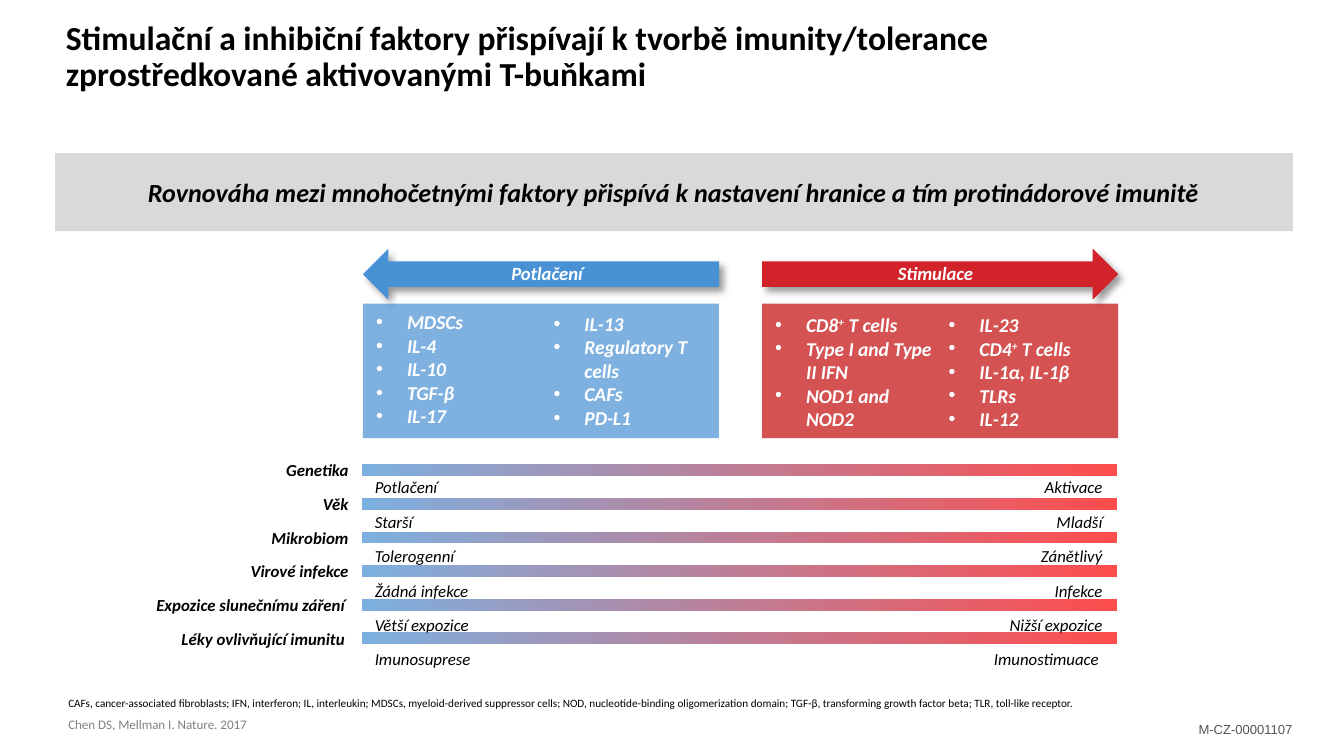
from lxml import etree
from pptx import Presentation
from pptx.dml.color import RGBColor
from pptx.enum.shapes import MSO_SHAPE
from pptx.enum.text import MSO_ANCHOR, PP_ALIGN
from pptx.oxml.ns import qn
from pptx.util import Inches, Pt

LEFT, CENTER, RIGHT = PP_ALIGN.LEFT, PP_ALIGN.CENTER, PP_ALIGN.RIGHT
TOP, MIDDLE, BOTTOM = MSO_ANCHOR.TOP, MSO_ANCHOR.MIDDLE, MSO_ANCHOR.BOTTOM
RECTANGLE = MSO_SHAPE.RECTANGLE

THEME = {
    "font": "Calibri", "code_font": "Arial",
    "black": "000000", "white": "FFFFFF", "gray": "808080", "code": "555555",
    "band": "D9D9D9", "blue": "4891D4", "red": "D2232A",
    "dark_red": "C00000", "bright_red": "FF0000",
    "title": 18, "message": 14, "list": 10.5, "arrow": 10, "label": 9,
    "source": 7, "note": 6,
}

TITLE = ("Stimulační a inhibiční faktory přispívají k tvorbě imunity/tolerance "
         "zprostředkované aktivovanými T-buňkami")
MESSAGE = ("Rovnováha mezi mnohočetnými faktory přispívá k nastavení hranice "
           "a tím protinádorové imunitě")
ABBREVIATIONS = (
    "CAFs, cancer-associated fibroblasts; IFN, interferon; IL, interleukin; "
    "MDSCs, myeloid-derived suppressor cells; NOD, nucleotide-binding oligomerization domain; "
    "TGF-β, transforming growth factor beta; TLR, toll-like receptor.")
SOURCE = "Chen DS, Mellman I. Nature. 2017"
DOCUMENT_CODE = "M-CZ-00001107"

PANELS = [
    {"heading": "Potlačení", "left": 2.7, "heading_left": 3.41,
     "arrow": MSO_SHAPE.LEFT_ARROW,
     "arrow_color": "blue", "color": "blue", "opacity": 70,
     "lists": [
         (2.7, 2.26, 1.42, ["MDSCs", "IL-4", "IL-10", "TGF-β", "IL-17"]),
         (4.02, 2.27, 1.32, ["IL-13", "Regulatory T cells", "CAFs", "PD-L1"])]},
    {"heading": "Stimulace", "left": 5.67, "heading_left": 6.3,
     "arrow": MSO_SHAPE.RIGHT_ARROW,
     "arrow_color": "red", "color": "dark_red", "opacity": 68,
     "lists": [
         (5.67, 2.28, 1.4, ["CD8^+^ T cells", "Type I and Type II IFN", "NOD1 and NOD2"]),
         (6.96, 2.28, 1.36, ["IL-23", "CD4^+^ T cells", "IL-1α, IL-1β", "TLRs", "IL-12"])]},
]
SCALES = [
    ("Genetika", "Potlačení", "Aktivace"),
    ("Věk", "Starší", "Mladší"),
    ("Mikrobiom", "Tolerogenní", "Zánětlivý"),
    ("Virové infekce", "Žádná infekce", "Infekce"),
    ("Expozice slunečnímu záření ", "Větší expozice", "Nižší expozice"),
    ("Léky ovlivňující imunitu ", "Imunosuprese", "Imunostimuace "),
]
SCALE_COLORS = [("blue", 71), ("bright_red", 70)]
PANEL_TOP, PANEL_WIDTH, PANEL_HEIGHT = 2.26, 2.65, 1
ARROW_TOP, ARROW_HEIGHT = 1.85, 0.38
SCALE_LEFT, SCALE_WIDTH, SCALE_HEIGHT = 2.7, 5.61, 0.08
BAR_TOPS, END_TOPS, CATEGORY_TOPS = (3.46, 4.71), (3.5, 4.78), (3.37, 4.63)
LABEL_WIDTH, LABEL_HEIGHT = 1.89, 0.25


def color(name):
    return RGBColor.from_string(THEME[name])


def style_run(run, size, color_name="black", bold=False, italic=False, font="font"):
    run.font.name = THEME[font]
    run.font.size = Pt(THEME[size])
    run.font.color.rgb = color(color_name)
    run.font.bold = bold
    run.font.italic = italic


def write(text_frame, text, align=LEFT, anchor=TOP, **style):
    text_frame.word_wrap = True
    text_frame.vertical_anchor = anchor
    text_frame.text = text
    for paragraph in text_frame.paragraphs:
        paragraph.alignment = align
        for run in paragraph.runs:
            style_run(run, **style)


def add_text(slide, box, text, **style):
    text_box = slide.shapes.add_textbox(*map(Inches, box))
    write(text_box.text_frame, text, **style)
    return text_box


def set_opacity(color_element, percent):
    etree.SubElement(color_element, qn("a:alpha"), val=str(percent * 1000))


def add_shape(slide, kind, box, fill=None, opacity=100):
    shape = slide.shapes.add_shape(kind, *map(Inches, box))
    shape.shadow.inherit = False
    shape.line.fill.background()
    if fill:
        shape.fill.solid()
        shape.fill.fore_color.rgb = color(fill)
        if opacity < 100:
            set_opacity(shape._element.spPr.find(".//" + qn("a:srgbClr")), opacity)
    return shape


def add_shadow(shape):
    effects = shape._element.spPr.find(qn("a:effectLst"))
    shadow = etree.SubElement(effects, qn("a:outerShdw"), blurRad=str(Pt(4)),
                              dist=str(Pt(3)), dir="2700000", algn="tl", rotWithShape="0")
    set_opacity(etree.SubElement(shadow, qn("a:srgbClr"), val=THEME["black"]), 40)


def add_bullets(slide, box, items):
    text_frame = slide.shapes.add_textbox(*map(Inches, box)).text_frame
    text_frame.word_wrap = True
    for index, item in enumerate(items):
        paragraph = text_frame.add_paragraph() if index else text_frame.paragraphs[0]
        properties = paragraph._p.get_or_add_pPr()
        properties.set("marL", str(Inches(0.23)))
        properties.set("indent", str(-Inches(0.23)))
        etree.SubElement(properties, qn("a:buFont"), typeface="Arial")
        etree.SubElement(properties, qn("a:buChar"), char="•")
        for part_index, part in enumerate(item.split("^")):
            run = paragraph.add_run()
            run.text = part
            style_run(run, "list", "white", bold=True, italic=True)
            if part_index % 2:
                run._r.get_or_add_rPr().set("baseline", "30000")


def add_panel(slide, panel):
    left = panel["left"]
    add_shape(slide, RECTANGLE, (left, PANEL_TOP, PANEL_WIDTH, PANEL_HEIGHT),
              panel["color"], panel["opacity"])
    arrow = add_shape(slide, panel["arrow"], (left, ARROW_TOP, PANEL_WIDTH, ARROW_HEIGHT),
                      panel["arrow_color"])
    add_shadow(arrow)
    add_text(slide, (panel["heading_left"], 1.9, 1.32, 0.28), panel["heading"],
             align=CENTER, size="arrow", color_name="white", bold=True, italic=True)
    for list_left, top, width, items in panel["lists"]:
        add_bullets(slide, (list_left, top, width, 0.98), items)


def row_top(tops, index):
    first, last = tops
    return first + (last - first) * index / (len(SCALES) - 1)


def add_scale(slide, index, category, low, high):
    bar_top, end_top, category_top = (
        row_top(tops, index) for tops in (BAR_TOPS, END_TOPS, CATEGORY_TOPS))
    bar = add_shape(slide, RECTANGLE, (SCALE_LEFT, bar_top, SCALE_WIDTH, SCALE_HEIGHT))
    bar.fill.gradient()
    bar.fill.gradient_angle = 0
    for stop, (name, _) in zip(bar.fill.gradient_stops, SCALE_COLORS):
        stop.color.rgb = color(name)
    elements = bar._element.spPr.iter(qn("a:srgbClr"))
    for element, (_, opacity) in zip(elements, SCALE_COLORS):
        set_opacity(element, opacity)
    high_left = SCALE_LEFT + SCALE_WIDTH - LABEL_WIDTH - 0.01
    add_text(slide, (SCALE_LEFT - 0.01, end_top, LABEL_WIDTH, LABEL_HEIGHT), low,
             size="label", italic=True)
    add_text(slide, (high_left, end_top, LABEL_WIDTH, LABEL_HEIGHT), high,
             align=RIGHT, size="label", italic=True)
    add_text(slide, (0.3, category_top, 2.39, LABEL_HEIGHT), category,
             align=RIGHT, size="label", bold=True, italic=True)


def add_footer(slide):
    footer = add_text(slide, (0.41, 5.05, 9.16, 0.45), ABBREVIATIONS + "\n" + SOURCE,
                      anchor=BOTTOM, size="note")
    notes, source = footer.text_frame.paragraphs
    notes.line_spacing = source.line_spacing = Pt(7.5)
    source.space_before = Pt(4.5)
    style_run(source.runs[0], "source", "gray")
    code = add_shape(slide, RECTANGLE, (8.82, 5.32, 1.06, 0.22), "white")
    write(code.text_frame, DOCUMENT_CODE, size="source", color_name="code", font="code_font")


def main():
    presentation = Presentation()
    presentation.slide_width = Inches(10)
    presentation.slide_height = Inches(10) * 9 // 16
    slide = presentation.slides.add_slide(presentation.slide_layouts[5])
    title = slide.shapes.title
    title.left, title.top, title.width, title.height = map(Inches, (0.39, 0.11, 7.79, 0.81))
    write(title.text_frame, TITLE, size="title", bold=True)
    title.text_frame.paragraphs[0].line_spacing = 0.9
    band = add_shape(slide, RECTANGLE, (0.41, 1.14, 9.21, 0.58), "band")
    write(band.text_frame, MESSAGE, align=CENTER, anchor=MIDDLE,
          size="message", bold=True, italic=True)
    for panel in PANELS:
        add_panel(slide, panel)
    for index, scale in enumerate(SCALES):
        add_scale(slide, index, *scale)
    add_footer(slide)
    presentation.save("out.pptx")


if __name__ == "__main__":
    main()
